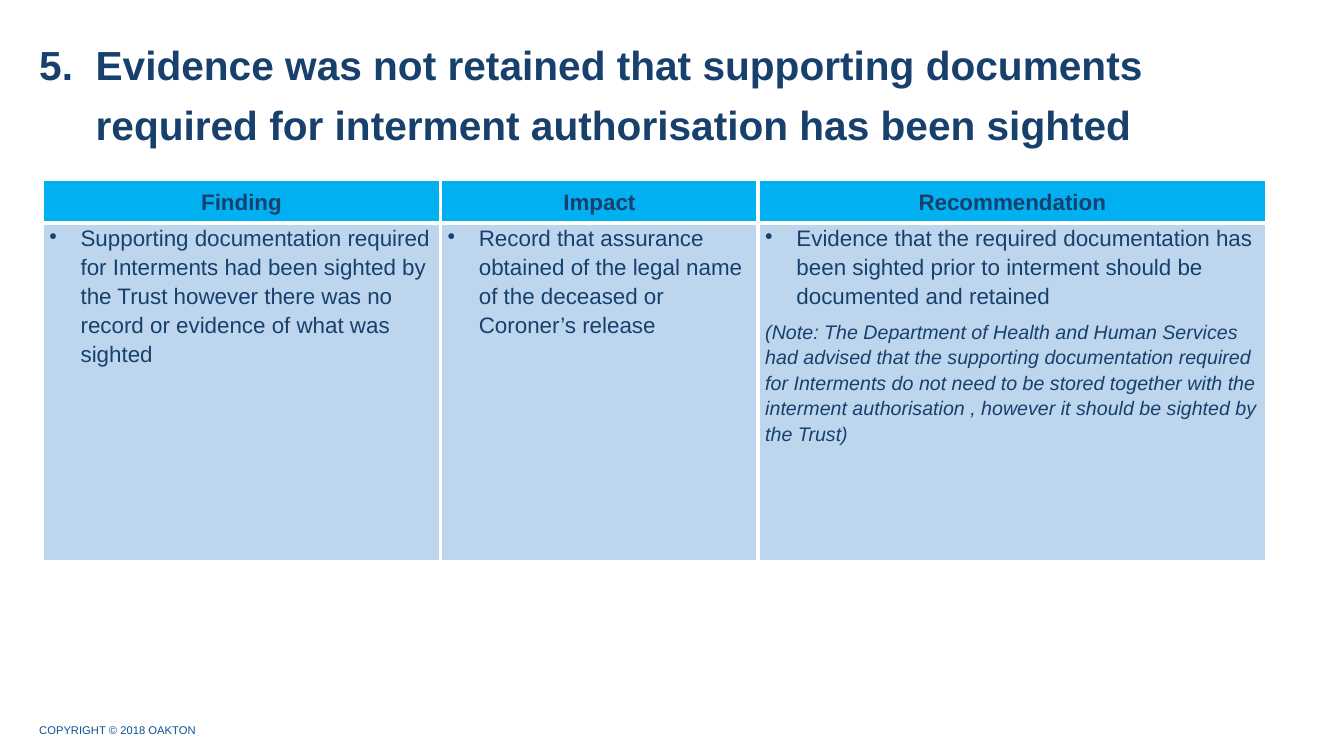
from dataclasses import dataclass

from lxml.etree import SubElement
from pptx import Presentation
from pptx.dml.color import RGBColor
from pptx.enum.text import MSO_ANCHOR, PP_ALIGN
from pptx.oxml.ns import qn
from pptx.util import Pt

EMU_PER_PX = 9144  # 100 px to the inch


def px(length: int) -> int:
    return length * EMU_PER_PX


@dataclass(frozen=True)
class Theme:
    font: str = "Arial"
    ink: str = "17406D"
    footer_ink: str = "0B5394"
    header_fill: str = "00B0F0"
    body_fill: str = "BDD6EE"
    border: str = "FFFFFF"
    title_size: int = 29
    table_size: int = 16
    note_size: int = 14
    footer_size: int = 8
    border_width: int = 3
    title_spacing: float = 1.25
    table_spacing: float = 1.16


@dataclass(frozen=True)
class Box:
    left: int
    top: int
    width: int
    height: int


@dataclass(frozen=True)
class Column:
    heading: str
    width: int
    bullet: str
    note: str = ""


THEME = Theme()
TITLE_BOX = Box(29, 36, 1121, 103)
TABLE_BOX = Box(42, 178, 1214, 379)
FOOTER_BOX = Box(29, 712, 495, 24)
HEADER_HEIGHT = 43
CELL_MARGIN = 7
TITLE_INDENT = 56
BULLET_INDENT = 31
TITLE_NUMBER = 5

TITLE = ("Evidence was not retained that supporting documents required "
         "for interment authorisation has been sighted")
FOOTER = "COPYRIGHT © 2018 OAKTON"
COLUMNS = [
    Column("Finding", 395,
           "Supporting documentation required for Interments had been sighted by "
           "the Trust however there was no record or evidence of what was sighted"),
    Column("Impact", 315,
           "Record that assurance obtained of the legal name of the deceased or "
           "Coroner’s release"),
    Column("Recommendation", 504,
           "Evidence that the required documentation has been sighted prior to "
           "interment should be documented and retained",
           "(Note: The Department of Health and Human Services had advised that the "
           "supporting documentation required for Interments do not need to be stored "
           "together with the interment authorisation , however it should be sighted "
           "by the Trust)"),
]


def hang(para, indent: int, marker: str, **attributes: str) -> None:
    """Give a paragraph a hanging indent and a bullet or number."""
    properties = para._p.get_or_add_pPr()
    properties.set("marL", str(px(indent)))
    properties.set("indent", str(-px(indent)))
    SubElement(properties, qn(marker), **attributes)


def style(para, size: int, color: str = THEME.ink, bold: bool = False,
          italic: bool = False) -> None:
    for span in para.runs:
        span.font.name = THEME.font
        span.font.size = Pt(size)
        span.font.color.rgb = RGBColor.from_string(color)
        span.font.bold = bold
        span.font.italic = italic


def add_text(page, box: Box, text: str):
    frame = page.shapes.add_textbox(
        px(box.left), px(box.top), px(box.width), px(box.height)).text_frame
    frame.word_wrap = True
    frame.vertical_anchor = MSO_ANCHOR.MIDDLE
    frame.text = text
    return frame.paragraphs[0]


def dress_cell(cell, fill: str) -> None:
    """Set margins, white borders and fill."""
    cell.margin_left = cell.margin_right = px(CELL_MARGIN)
    cell.margin_top = cell.margin_bottom = 0
    properties = cell._tc.get_or_add_tcPr()
    for side in ("a:lnL", "a:lnR", "a:lnT", "a:lnB"):
        line = SubElement(properties, qn(side), w=str(Pt(THEME.border_width)))
        paint = SubElement(line, qn("a:solidFill"))
        SubElement(paint, qn("a:srgbClr"), val=THEME.border)
    cell.fill.solid()
    cell.fill.fore_color.rgb = RGBColor.from_string(fill)


def fill_header(cell, column: Column) -> None:
    dress_cell(cell, THEME.header_fill)
    cell.vertical_anchor = MSO_ANCHOR.MIDDLE
    cell.text_frame.text = column.heading
    para = cell.text_frame.paragraphs[0]
    para.alignment = PP_ALIGN.CENTER
    para.line_spacing = THEME.table_spacing
    style(para, THEME.table_size, bold=True)


def fill_body(cell, column: Column) -> None:
    dress_cell(cell, THEME.body_fill)
    cell.text_frame.text = column.bullet
    para = cell.text_frame.paragraphs[0]
    hang(para, BULLET_INDENT, "a:buChar", char="•")
    para.line_spacing = THEME.table_spacing
    para.space_after = Pt(3)
    style(para, THEME.table_size)
    if column.note:
        note = cell.text_frame.add_paragraph()
        note.text = column.note
        note.line_spacing = THEME.table_spacing
        note.space_before = Pt(3)
        style(note, THEME.note_size, italic=True)


def add_findings(page, box: Box) -> None:
    table = page.shapes.add_table(
        2, len(COLUMNS), px(box.left), px(box.top), px(box.width), px(box.height)).table
    table.first_row = table.horz_banding = False
    table.rows[0].height = px(HEADER_HEIGHT)
    table.rows[1].height = px(box.height - HEADER_HEIGHT)
    for index, column in enumerate(COLUMNS):
        table.columns[index].width = px(column.width)
        fill_header(table.cell(0, index), column)
        fill_body(table.cell(1, index), column)


def main() -> None:
    deck = Presentation()
    deck.slide_width, deck.slide_height = px(1333), px(750)
    page = deck.slides.add_slide(deck.slide_layouts[6])

    # Footer
    style(add_text(page, FOOTER_BOX, FOOTER), THEME.footer_size, THEME.footer_ink)

    # Numbered title
    title = add_text(page, TITLE_BOX, TITLE)
    hang(title, TITLE_INDENT, "a:buAutoNum", type="arabicPeriod",
         startAt=str(TITLE_NUMBER))
    title.line_spacing = THEME.title_spacing
    style(title, THEME.title_size, bold=True)

    # Findings table
    add_findings(page, TABLE_BOX)

    deck.save("out.pptx")


if __name__ == "__main__":
    main()
